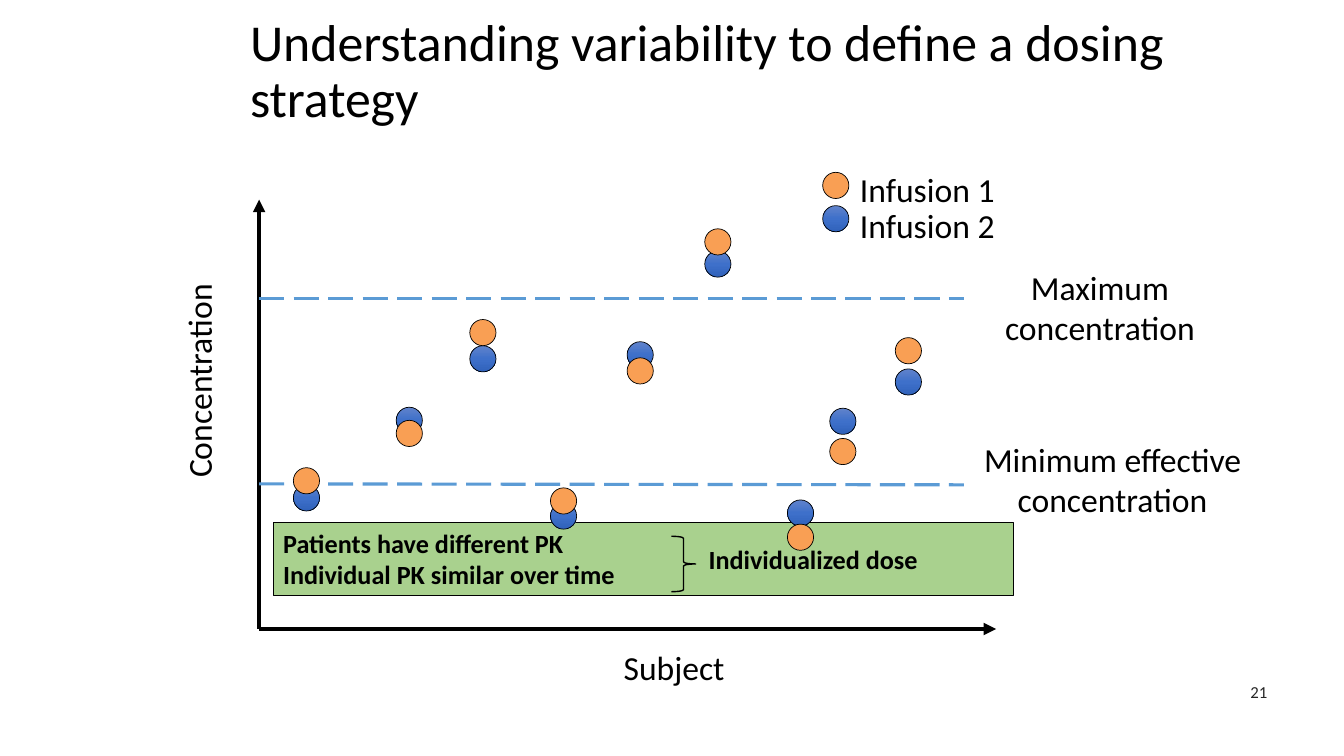
"""Build a slide on how variability in concentration guides dosing."""
from copy import deepcopy

from lxml import etree
from pptx import Presentation
from pptx import util as u
from pptx.dml.color import RGBColor
from pptx.enum import dml, shapes, text
from pptx.oxml import ns

COLUMNS, ROWS = 133.3, 75
WIDTH, HEIGHT = u.Inches(13.33), u.Inches(7.5)
BLACK = RGBColor(0x00, 0x00, 0x00)
GREY = RGBColor(0x26, 0x26, 0x26)
ORANGE = RGBColor(0xF9, 0x9F, 0x54)
GREEN = RGBColor(0xA9, 0xD1, 0x8E)
LIMIT_BLUE = RGBColor(0x5B, 0x9B, 0xD5)
BLUES = (RGBColor(0x61, 0x83, 0xCB), RGBColor(0x3E, 0x70, 0xCA), RGBColor(0x30, 0x62, 0xBB))

LABEL = {"name": "Calibri", "size": u.Pt(24), "bold": False}
MESSAGE = {"name": "Calibri", "size": u.Pt(18.7), "bold": True}
TITLE = {"name": "Calibri", "size": u.Pt(37), "bold": False}
NUMBER = {"name": "Calibri", "size": u.Pt(12), "bold": False}
LEFT, CENTER, RIGHT = text.PP_ALIGN.LEFT, text.PP_ALIGN.CENTER, text.PP_ALIGN.RIGHT
TOP, MIDDLE = text.MSO_ANCHOR.TOP, text.MSO_ANCHOR.MIDDLE

DOT = 2.6
ORIGIN = (25.7, 62.4)
SUBJECTS = [
    (29.1, 46.4, 48.1), (39.3, 41.7, 40.4), (46.6, 31.7, 34.3),
    (54.6, 48.4, 49.9), (62.2, 35.5, 33.9), (69.9, 22.7, 24.9),
    (78.1, 52, 49.6), (82.3, 43.5, 40.5), (88.8, 33.5, 36.6),
]
LABELS = [
    ("Concentration", (7, 35.3, 25.4, 5), CENTER, 270),
    ("Subject", (57.4, 63.7, 18.9, 5), CENTER, 0),
    ("Minimum effective concentration", (95.6, 43, 29.5, 9.1), CENTER, 0),
    ("Maximum concentration", (95.6, 26, 27, 9.1), CENTER, 0),
    ("Infusion 1", (84.3, 16.3, 18.9, 5), LEFT, 0),
    ("Infusion 2", (84.3, 19.8, 18.9, 5), LEFT, 0),
]


def across(columns):
    """Return the length of a number of grid columns."""
    return round(WIDTH * columns / COLUMNS)


def down(rows):
    """Return the length of a number of grid rows."""
    return round(HEIGHT * rows / ROWS)


def place(left, top, width, height):
    """Turn grid values into a position and size."""
    return across(left), down(top), across(width), down(height)


def write(box, lines, style, align=LEFT, anchor=TOP, color=BLACK):
    """Fill a box with styled paragraphs."""
    frame = box.text_frame
    settings = {"word_wrap": True, "auto_size": text.MSO_AUTO_SIZE.NONE, "vertical_anchor": anchor}
    for name, value in settings.items():
        setattr(frame, name, value)
    for index, line in enumerate(lines):
        para = frame.add_paragraph() if index else frame.paragraphs[0]
        para.alignment = align
        span = para.add_run()
        span.text = line
        for name, value in style.items():
            setattr(span.font, name, value)
        span.font.color.rgb = color


def add_text(slide, lines, area, style, align=LEFT, rotation=0, **options):
    """Add a wrapped text box."""
    box = slide.shapes.add_textbox(*place(*area))
    box.rotation = rotation
    write(box, lines, style, align, **options)


def add_outlined(parent, kind, area, width, fill=None):
    """Add a black-outlined shape, filled or hollow."""
    shape = parent.shapes.add_shape(kind, *place(*area))
    shape.shadow.inherit = False
    shape.line.color.rgb = BLACK
    shape.line.width = u.Pt(width)
    if fill is None:
        shape.fill.background()
    else:
        shape.fill.solid()
        shape.fill.fore_color.rgb = fill
    return shape


def add_orange_dot(parent, left, top):
    """Add a dot for the first infusion."""
    add_outlined(parent, shapes.MSO_SHAPE.OVAL, (left, top, DOT, DOT), 0.5, ORANGE)


def add_blue_dot(parent, left, top):
    """Add a shaded dot for the second infusion."""
    dot = add_outlined(parent, shapes.MSO_SHAPE.OVAL, (left, top, DOT, DOT), 0.5)
    dot.fill.gradient()
    dot.fill.gradient_angle = 270
    stop_list = dot._element.xpath(".//a:gsLst")[0]
    stop_list.insert(1, deepcopy(stop_list[0]))
    for stop, color, position in zip(dot.fill.gradient_stops, BLUES, (0, 0.5, 1)):
        stop.color.rgb = color
        stop.position = position


def add_line(slide, start, end, color, width):
    """Add a straight line without a shadow."""
    line = slide.shapes.add_connector(
        shapes.MSO_CONNECTOR.STRAIGHT,
        across(start[0]), down(start[1]), across(end[0]), down(end[1]))
    line.line.color.rgb = color
    line.line.width = u.Pt(width)
    etree.SubElement(line._element.spPr, ns.qn("a:effectLst"))
    return line


def add_axis(slide, tip):
    """Add an axis with an arrowhead at its tip."""
    axis = add_line(slide, tip, ORIGIN, BLACK, 3)
    etree.SubElement(axis.line._get_or_add_ln(), ns.qn("a:headEnd"), type="triangle")


def add_limit(slide, first_row, last_row):
    """Add a dashed concentration limit."""
    limit = add_line(slide, (ORIGIN[0], first_row), (95.6, last_row), LIMIT_BLUE, 2.25)
    limit.line.dash_style = dml.MSO_LINE.LONG_DASH


def add_title(slide):
    """Place and fill the title."""
    title = slide.shapes.title
    sides = zip(("left", "top", "width", "height"), place(23.8, 0, 100.3, 14.5))
    for name, value in sides:
        setattr(title, name, value)
    write(title, ["Understanding variability to define a dosing strategy"], TITLE, anchor=MIDDLE)
    title.text_frame.paragraphs[0].line_spacing = 0.9


def add_conclusion(slide):
    """Add the green band that leads to the individualized dose."""
    band = add_outlined(slide, shapes.MSO_SHAPE.RECTANGLE, (27.1, 51.8, 73.4, 7.3), 0.75, GREEN)
    write(band, ["Patients have different PK", "Individual PK similar over time"], MESSAGE)
    add_outlined(slide, shapes.MSO_SHAPE.RIGHT_BRACE, (66.6, 53.2, 2.4, 5.5), 1)
    add_text(slide, ["Individualized dose"], (69.3, 53.4, 41, 4.2), MESSAGE)


def add_measurements(slide):
    """Add both infusions of every subject, the first in front."""
    group = slide.shapes.add_group_shape()
    for column, _, second in SUBJECTS:
        add_blue_dot(group, column, second)
    for column, first, _ in SUBJECTS:
        add_orange_dot(group, column, first)


def main():
    """Build and save the deck."""
    deck = Presentation()
    deck.slide_width, deck.slide_height = WIDTH, HEIGHT
    slide = deck.slides.add_slide(deck.slide_layouts[5])
    add_title(slide)
    add_text(slide, ["21"], (95.6, 66.6, 31.1, 4), NUMBER, RIGHT, anchor=MIDDLE, color=GREY)
    add_axis(slide, (ORIGIN[0], 19.8))
    add_axis(slide, (98.8, ORIGIN[1]))
    add_limit(slide, 29.6, 29.6)
    add_limit(slide, 48, 48.1)
    for label, area, align, rotation in LABELS:
        add_text(slide, [label], area, LABEL, align, rotation)
    add_orange_dot(slide, 81.6, 17.1)
    add_blue_dot(slide, 81.6, 20.4)
    add_conclusion(slide)
    add_measurements(slide)
    deck.save("out.pptx")


if __name__ == "__main__":
    main()
